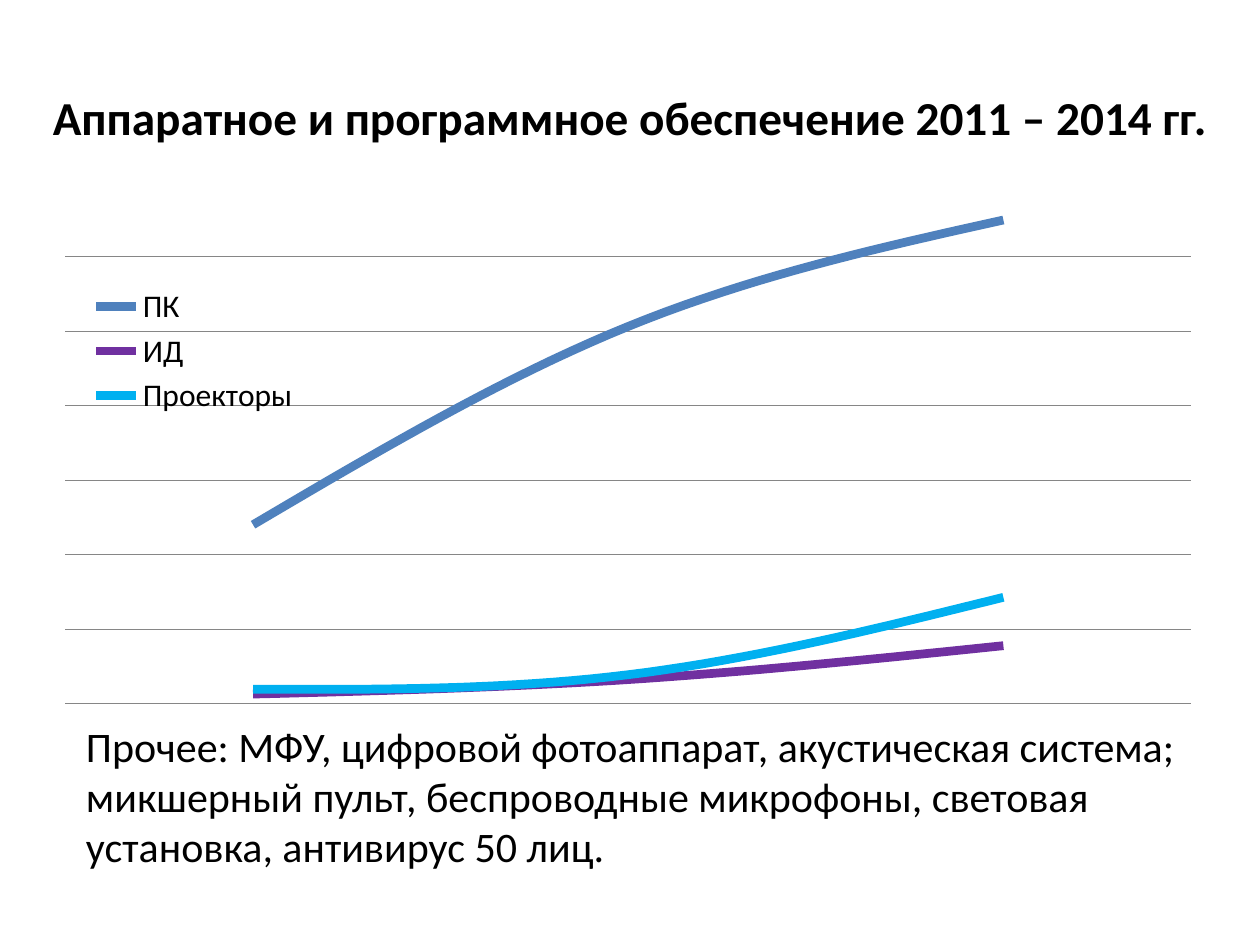
from lxml.etree import SubElement
from pptx import Presentation
from pptx.chart.data import CategoryChartData
from pptx.dml.color import RGBColor
from pptx.enum.chart import XL_CHART_TYPE, XL_LEGEND_POSITION
from pptx.enum.text import MSO_ANCHOR, MSO_AUTO_SIZE, PP_ALIGN
from pptx.oxml.ns import qn
from pptx.util import Pt

COLOURS = {
    "text": "000000",
    "grid": "868686",
    "ПК": "4F81BD",
    "ИД": "7030A0",
    "Проекторы": "00B0F0",
}
EQUIPMENT = {
    "ПК": (37, 78, 100),
    "ИД": (2, 5, 12),
    "Проекторы": (3, 6, 22),
}


def colour(name):
    return RGBColor.from_string(COLOURS[name])


def apply(target, values):
    for name, value in values.items():
        setattr(target, name, value)


def place_inside_chart(element, fractions, inner=False):
    """Fix the place of a plot area or legend, as fractions of the chart."""
    for old in element.findall(qn("c:layout")):
        element.remove(old)
    layout = SubElement(element, qn("c:layout"))
    manual = SubElement(layout, qn("c:manualLayout"))
    settings = {"layoutTarget": "inner"} if inner else {}
    settings |= {"xMode": "edge", "yMode": "edge"}
    settings |= dict(zip("xywh", fractions))
    for tag, value in settings.items():
        SubElement(manual, qn(f"c:{tag}")).set("val", str(value))
    position = 1 if element.find(qn("c:legendPos")) is not None else 0
    element.insert(position, layout)


class SlideBuilder:
    font_name = "Calibri"

    def __init__(self, page):
        self.page = page

    def style_font(self, font, size, **extra):
        apply(font, {"name": self.font_name, "size": Pt(size), **extra})
        font.color.rgb = colour("text")

    def add_span(self, box, text, size, **extra):
        span = box.text_frame.paragraphs[0].add_run()
        span.text = text
        self.style_font(span.font, size, **extra)

    def title(self, text, bounds, size):
        box = self.page.shapes.title
        apply(box, dict(zip(("left", "top", "width", "height"), map(Pt, bounds))))
        apply(box.text_frame, {"word_wrap": True, "vertical_anchor": MSO_ANCHOR.MIDDLE})
        box.text_frame.paragraphs[0].alignment = PP_ALIGN.CENTER
        self.add_span(box, text, size, bold=True)

    def text(self, text, bounds, size):
        box = self.page.shapes.add_textbox(*map(Pt, bounds))
        apply(box.text_frame, {"word_wrap": True,
                               "auto_size": MSO_AUTO_SIZE.SHAPE_TO_FIT_TEXT})
        self.add_span(box, text, size)

    def line_chart(self, categories, series, bounds, size):
        data = CategoryChartData()
        data.categories = categories
        for name, values in series.items():
            data.add_series(name, values)
        chart = self.page.shapes.add_chart(
            XL_CHART_TYPE.LINE, *map(Pt, bounds), data).chart
        apply(chart, {"has_title": False, "has_legend": True})
        self.style_font(chart.font, size)
        plot = chart.plots[0]
        plot.vary_by_categories = False
        for line in plot.series:
            line.smooth = True
            line.format.line.width = Pt(5)
            line.format.line.color.rgb = colour(line.name)
        apply(chart.category_axis, {"visible": False, "has_major_gridlines": False})
        apply(chart.value_axis, {"visible": False, "has_major_gridlines": True,
                                 "minimum_scale": 0, "maximum_scale": 100,
                                 "major_unit": 15.4})
        grid = chart.value_axis.major_gridlines.format.line
        grid.width = Pt(0.75)
        grid.color.rgb = colour("grid")
        apply(chart.legend, {"position": XL_LEGEND_POSITION.RIGHT,
                             "include_in_layout": True})
        place_inside_chart(chart.legend._element, (0.04, 0.14, 0.18, 0.28))
        plot_area = chart._chartSpace.chart.plotArea
        place_inside_chart(plot_area, (0.02, 0.02, 0.96, 0.96), inner=True)


def main():
    deck = Presentation()
    apply(deck, {"slide_width": Pt(720), "slide_height": Pt(540)})
    title_only = deck.slide_layouts[5]
    slide = SlideBuilder(deck.slides.add_slide(title_only))
    slide.title("Аппаратное и программное обеспечение 2011 – 2014 гг.",
                (0, 21.6, 720, 90), 27)
    slide.line_chart(("1", "2", "3"), EQUIPMENT, (24, 120, 670, 288), 18)
    slide.text("Прочее: МФУ, цифровой фотоаппарат, акустическая система; "
               "микшерный пульт, беспроводные микрофоны, световая установка, "
               "антивирус 50 лиц.", (42, 408, 660, 94.5), 24)
    deck.save("out.pptx")


if __name__ == "__main__":
    main()
